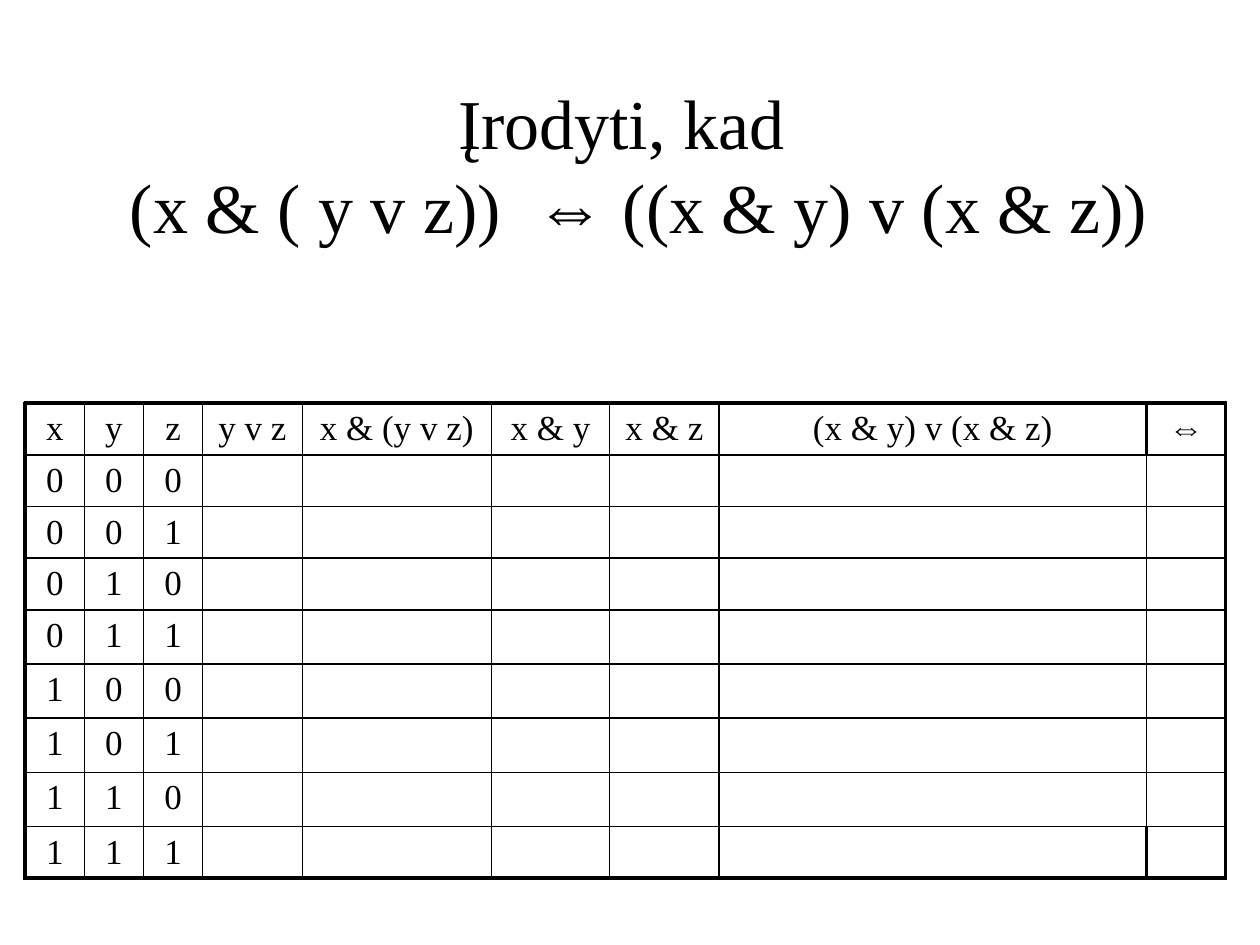
"""Build a slide with a truth table for the distributive law of logic."""
import itertools

import pptx
import pptx.dml.color
import pptx.enum.text
import pptx.oxml
import pptx.oxml.ns
import pptx.util

Inches = pptx.util.Inches
Pt = pptx.util.Pt
BLACK = pptx.dml.color.RGBColor(0, 0, 0)
FONT = "Times New Roman"
THIN, THICK = 1, 2.25

HEADING = "Įrodyti, kad \v (x & ( y v z))  ⇔ ((x & y) v (x & z))"
HEADERS = ["x", "y", "z", "y v z", "x & (y v z)", "x & y", "x & z",
           "(x & y) v (x & z)", "⇔"]
COLUMN_WIDTHS = [0.47, 0.47, 0.47, 0.79, 1.5, 0.94, 0.87, 3.39, 0.63]
ROW_HEIGHTS = [0.41] * 4 + [0.43] * 4 + [0.41]
TRUTH_VALUES = list(itertools.product("01", repeat=3))
GRID = [HEADERS] + [list(values) + [""] * 6 for values in TRUTH_VALUES]


def write(frame, text, size=20, bold=False):
    frame.text = text
    paragraph = frame.paragraphs[0]
    paragraph.alignment = pptx.enum.text.PP_ALIGN.CENTER
    for run in paragraph.runs:
        run.font.name = FONT
        run.font.size = Pt(size)
        run.font.bold = bold
        run.font.color.rgb = BLACK


def draw_borders(cell, weights):
    properties = cell._tc.get_or_add_tcPr()
    for side, weight in weights.items():
        properties.append(pptx.oxml.parse_xml(
            f'<a:ln{side} {pptx.oxml.ns.nsdecls("a")} w="{Pt(weight)}">'
            f'<a:solidFill><a:srgbClr val="{BLACK}"/></a:solidFill></a:ln{side}>'))


def border_weights(row, column):
    last_row, last_column = len(GRID) - 1, len(HEADERS) - 1
    outer_row = row in (0, last_row)
    thick = {
        "L": column == 0 or (outer_row and column == last_column),
        "R": column == last_column or (outer_row and column == last_column - 1),
        "T": row == 0,
        "B": row == last_row,
    }
    return {side: THICK if heavy else THIN for side, heavy in thick.items()}


def add_truth_table(slide):
    table = slide.shapes.add_table(
        len(GRID), len(HEADERS), Inches(0.2), Inches(3.2),
        Inches(sum(COLUMN_WIDTHS)), Inches(sum(ROW_HEIGHTS))).table
    table.first_row = table.horz_banding = False
    for column, width in zip(table.columns, COLUMN_WIDTHS):
        column.width = Inches(width)
    for row, height in zip(table.rows, ROW_HEIGHTS):
        row.height = Inches(height)
    for row, texts in enumerate(GRID):
        for column, text in enumerate(texts):
            cell = table.cell(row, column)
            write(cell.text_frame, text, bold=text == "⇔")
            draw_borders(cell, border_weights(row, column))
            cell.fill.background()


def main():
    presentation = pptx.Presentation()
    presentation.slide_width, presentation.slide_height = Inches(10), Inches(7.5)
    slide = presentation.slides.add_slide(presentation.slide_layouts[5])
    heading = slide.shapes.title
    heading.left, heading.top = Inches(0.75), Inches(0.67)
    heading.width, heading.height = Inches(8.5), Inches(1.25)
    heading.text_frame.auto_size = pptx.enum.text.MSO_AUTO_SIZE.NONE
    heading.text_frame.vertical_anchor = pptx.enum.text.MSO_ANCHOR.MIDDLE
    write(heading.text_frame, HEADING, size=40)
    add_truth_table(slide)
    presentation.save("out.pptx")


if __name__ == "__main__":
    main()
